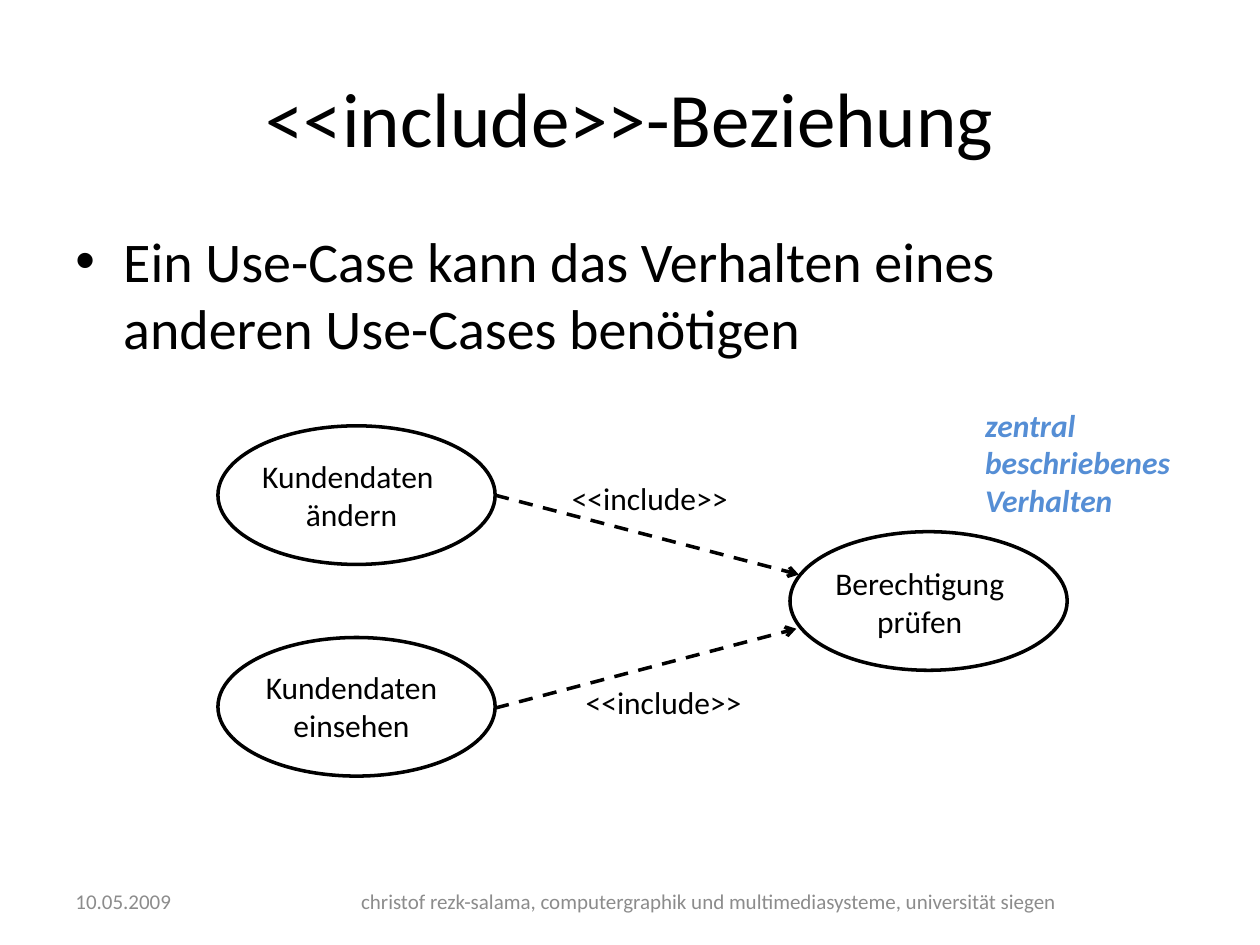
from dataclasses import dataclass

from lxml.etree import SubElement
from pptx import Presentation
from pptx.dml.color import RGBColor as Rgb
from pptx.enum.dml import MSO_LINE as Dash
from pptx.enum.shapes import MSO_CONNECTOR as Link, MSO_SHAPE as Form
from pptx.enum.text import MSO_ANCHOR as Anchor, MSO_AUTO_SIZE as Auto, PP_ALIGN as Align
from pptx.oxml.ns import qn
from pptx.util import Inches, Pt


@dataclass(frozen=True)
class Theme:
    font: str = "Calibri"
    ink: str = "000000"
    paper: str = "FFFFFF"
    grey: str = "8C8C8C"
    blue: str = "558ED5"
    head: int = 44
    body: int = 32
    label: int = 18
    foot: int = 12
    line: int = 2


class Page:
    def __init__(self, slide, theme):
        self.slide, self.theme = slide, theme

    def fill(self, frame, lines, size, color=None, align=Align.LEFT, **extra):
        """Put one paragraph per line into the frame."""
        form = {"name": self.theme.font, "size": Pt(size), **extra}
        for i, line in enumerate(lines):
            para = frame.add_paragraph() if i else frame.paragraphs[0]
            para.alignment = align
            run = para.add_run()
            run.text = line
            for key, value in form.items():
                setattr(run.font, key, value)
            run.font.color.rgb = Rgb.from_string(color or self.theme.ink)

    def title(self, text, box):
        head = self.slide.shapes.title
        for key, value in zip(("left", "top", "width", "height"), box):
            setattr(head, key, Inches(value))
        head.text_frame.vertical_anchor = Anchor.MIDDLE
        self.fill(head.text_frame, [text], self.theme.head, align=Align.CENTER)

    def text(self, lines, box, size, wrap=True, anchor=Anchor.TOP, **form):
        frame = self.slide.shapes.add_textbox(*map(Inches, box)).text_frame
        frame.word_wrap = wrap
        frame.auto_size = Auto.NONE if wrap else Auto.SHAPE_TO_FIT_TEXT
        frame.vertical_anchor = anchor
        self.fill(frame, lines, size, **form)
        return frame

    def bullet(self, text, box):
        frame = self.text([text], box, self.theme.body)
        props = frame.paragraphs[0]._p.get_or_add_pPr()
        props.set("marL", str(Inches(0.38)))
        props.set("indent", str(Inches(-0.38)))
        SubElement(props, qn("a:buFont"), typeface="Arial")
        SubElement(props, qn("a:buChar"), char="•")

    def label(self, lines, box, **form):
        self.text(lines, box, self.theme.label, wrap=False, **form)

    def case(self, lines, left, top, box):
        """Draw a use case: an ellipse with its name on top."""
        oval = self.slide.shapes.add_shape(
            Form.OVAL, *map(Inches, (left, top, 2.2, 1.1)))
        oval.shadow.inherit = False
        oval.fill.solid()
        oval.fill.fore_color.rgb = Rgb.from_string(self.theme.paper)
        self.stroke(oval.line)
        self.label(lines, box, align=Align.CENTER)

    def stroke(self, line):
        line.color.rgb = Rgb.from_string(self.theme.ink)
        line.width = Pt(self.theme.line)

    def arrow(self, start, end):
        link = self.slide.shapes.add_connector(
            Link.STRAIGHT, *map(Inches, (*start, *end)))
        self.stroke(link.line)
        link.line.dash_style = Dash.DASH
        SubElement(link.line._get_or_add_ln(), qn("a:tailEnd"), type="arrow")
        SubElement(link._element.spPr, qn("a:effectLst"))


def main():
    deck = Presentation()
    deck.slide_width, deck.slide_height = Inches(10), Inches(7.5)
    theme = Theme()
    page = Page(deck.slides.add_slide(deck.slide_layouts[5]), theme)

    page.title("<<include>>-Beziehung", (0.5, 0.3, 9, 1.25))
    page.bullet("Ein Use-Case kann das Verhalten eines anderen Use-Cases benötigen",
                (0.5, 1.75, 9, 1.3))

    foot = {"size": theme.foot, "color": theme.grey, "anchor": Anchor.MIDDLE}
    page.text(["10.05.2009"], (0.5, 6.95, 1.92, 0.4), **foot)
    page.text(["christof rezk-salama, computergraphik und multimediasysteme, "
               "universität siegen"],
              (2.5, 6.95, 6.25, 0.4), align=Align.CENTER, **foot)

    page.case(["Kundendaten ", "ändern"], 1.73, 3.38, (1.97, 3.58, 1.64, 0.71))
    page.case(["Kundendaten", "einsehen"], 1.73, 5.06, (2, 5.25, 1.58, 0.71))
    page.case(["Berechtigung", "prüfen"], 6.27, 4.22, (6.52, 4.43, 1.56, 0.71))

    page.arrow((3.93, 3.93), (6.34, 4.56))
    page.arrow((3.93, 5.62), (6.32, 4.99))
    for left, top in ((4.44, 3.75), (4.55, 5.37)):
        page.label(["<<include>>"], (left, top, 1.46, 0.4))
    page.label(["zentral", "beschriebenes", "Verhalten"], (7.72, 3.17, 1.69, 1.01),
               color=theme.blue, bold=True, italic=True)

    deck.save("out.pptx")


if __name__ == "__main__":
    main()
